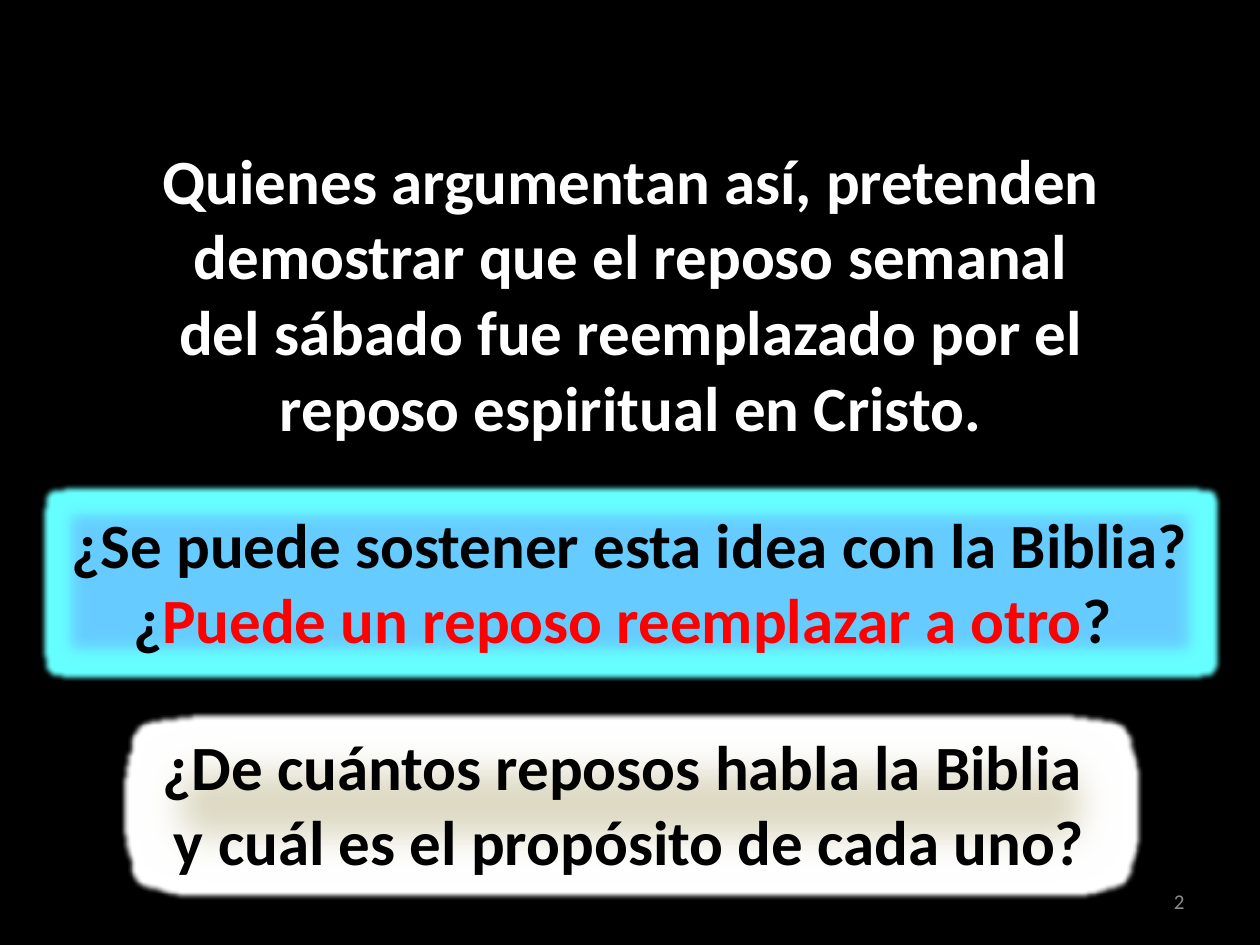
from lxml.etree import SubElement
from pptx import Presentation
from pptx.dml.color import RGBColor
from pptx.enum.shapes import MSO_SHAPE as Shape
from pptx.enum.text import MSO_ANCHOR as Anchor, PP_ALIGN as Align
from pptx.oxml.ns import qn
from pptx.util import Emu, Pt

PX = 914400 / 126
COLORS = {
    "black": "000000", "white": "FFFFFF", "red": "FF0000", "gray": "8C8C8C",
    "blue": "66CCFF", "cyan": "66FFFF", "sand": "DDD9C3",
}


def px(length):
    return Emu(round(length * PX))


def color(name):
    return RGBColor.from_string(COLORS[name])


def write(frame, paragraphs, size=36, bold=True, align=Align.CENTER, anchor=Anchor.TOP):
    """Each paragraph is a list of (text, color name) pairs."""
    frame.word_wrap = True
    frame.vertical_anchor = anchor
    for index, parts in enumerate(paragraphs):
        paragraph = frame.paragraphs[0] if index == 0 else frame.add_paragraph()
        paragraph.alignment = align
        for text, ink in parts:
            run = paragraph.add_run()
            run.text = text
            run.font.name = "Calibri"
            run.font.size = Pt(size)
            run.font.bold = bold
            run.font.color.rgb = color(ink)


def add_statement(slide, box):
    statement = slide.shapes.title
    statement.left, statement.top, statement.width, statement.height = map(px, box)
    write(statement.text_frame, [[(
        "Quienes argumentan así, pretenden demostrar que el reposo semanal "
        "del sábado fue reemplazado por el reposo espiritual en Cristo.", "white")]])


def add_question(slide, box, paragraphs, fill, glow, soft_edge):
    """A panel whose fill fades into a glow; soft_edge is in points."""
    panel = slide.shapes.add_shape(Shape.RECTANGLE, *map(px, box))
    panel.fill.solid()
    panel.fill.fore_color.rgb = color(fill)
    panel.line.fill.background()
    panel.shadow.inherit = False
    effects = panel._element.spPr.find(qn("a:effectLst"))
    halo = SubElement(effects, qn("a:glow"), rad=str(Pt(5)))
    SubElement(halo, qn("a:srgbClr"), val=COLORS[glow])
    SubElement(effects, qn("a:softEdge"), rad=str(Pt(soft_edge)))
    write(panel.text_frame, paragraphs)


def add_page_number(slide, box):
    number = slide.shapes.add_textbox(*map(px, box))
    write(number.text_frame, [[("2", "gray")]], size=12, bold=False,
          align=Align.RIGHT, anchor=Anchor.MIDDLE)


def main():
    deck = Presentation()
    deck.slide_width, deck.slide_height = px(1260), px(945)
    slide = deck.slides.add_slide(deck.slide_layouts[5])
    slide.background.fill.solid()
    slide.background.fill.fore_color.rgb = color("black")

    # Final question
    add_question(slide, (130, 721, 999, 165), [
        [("¿De cuántos reposos habla la Biblia ", "black")],
        [("y cuál es el propósito de cada uno?", "black")],
    ], fill="sand", glow="white", soft_edge=25)

    # Questions about the idea
    add_question(slide, (55, 499, 1149, 165), [[
        ("¿Se puede sostener esta idea con la Biblia? ¿", "black"),
        ("Puede un reposo reemplazar a otro", "red"),
        ("? ", "black"),
    ]], fill="blue", glow="cyan", soft_edge=9)

    # Opening statement and page number
    add_statement(slide, (135, 135, 992, 318))
    add_page_number(slide, (903, 876, 294, 50))
    deck.save("out.pptx")


if __name__ == "__main__":
    main()
